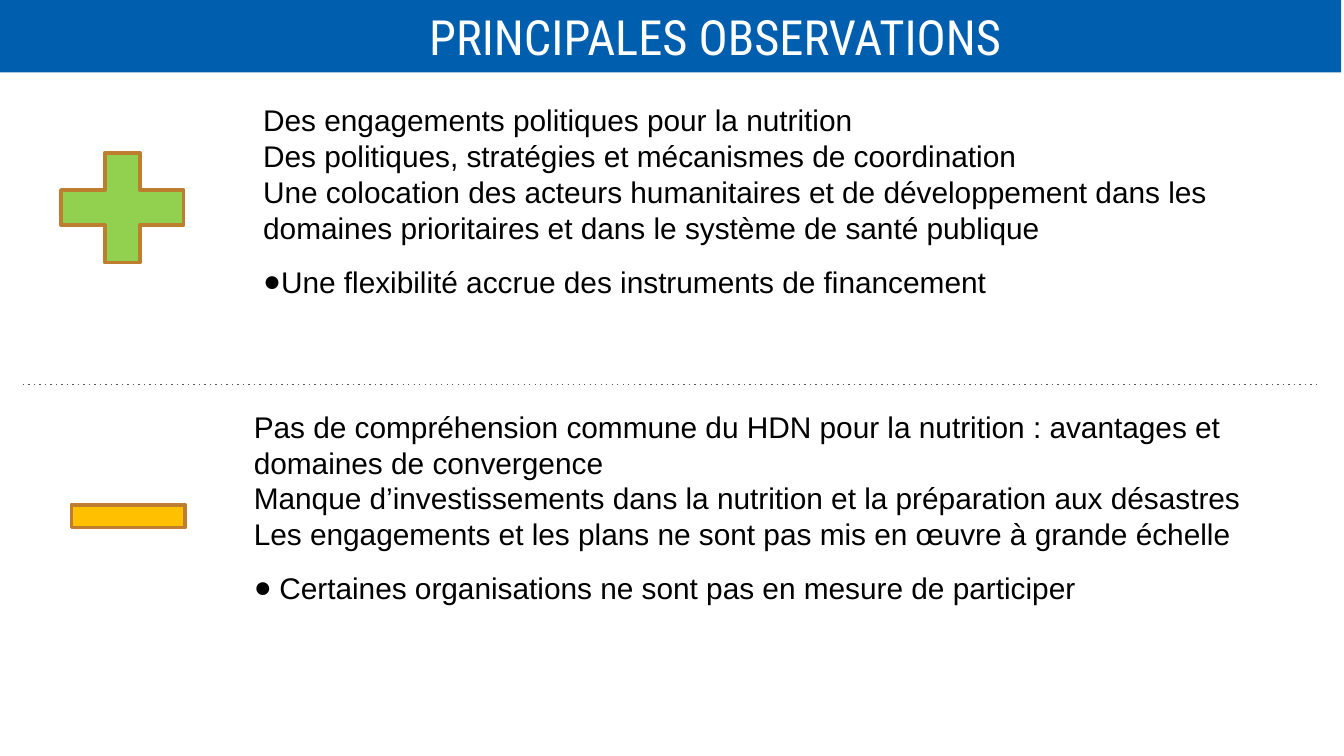
from lxml.etree import SubElement
from pptx import Presentation
from pptx.dml.color import RGBColor
from pptx.enum.shapes import MSO_CONNECTOR, MSO_SHAPE
from pptx.enum.text import MSO_ANCHOR, PP_ALIGN
from pptx.oxml.ns import qn
from pptx.util import Inches, Pt

# Content: plain lines first, then one bulleted line per section
TITLE = "PRINCIPALES OBSERVATIONS"
SECTIONS = [
    {
        "icon": (MSO_SHAPE.MATH_MINUS, "minus", (0.38, 3.48, 1.15, 0.72)),
        "area": (1.79, 2.99, 7.97, 2.15),
        "inset": 0.05,
        "indent": 0.19,
        "lines": [
            "Pas de compréhension commune du HDN pour la nutrition : avantages et "
            "domaines de convergence",
            "Manque d’investissements dans la nutrition et la préparation aux désastres",
            "Les engagements et les plans ne sont pas mis en œuvre à grande échelle",
        ],
        "bullet": "Certaines organisations ne sont pas en mesure de participer",
    },
    {
        "icon": (MSO_SHAPE.MATH_PLUS, "plus", (0.29, 0.99, 1.24, 1.11)),
        "area": (1.86, 0.66, 7.83, 2.05),
        "inset": 0.1,
        "indent": 0.12,
        "lines": [
            "Des engagements politiques pour la nutrition",
            "Des politiques, stratégies et mécanismes de coordination",
            "Une colocation des acteurs humanitaires et de développement dans les "
            "domaines prioritaires et dans le système de santé publique",
        ],
        "bullet": "Une flexibilité accrue des instruments de financement",
    },
]

THEME = {
    "banner": "005EAE", "title": "FFFFFF", "text": "000000",
    "plus": "92D050", "minus": "FFC000", "outline": "BD7F2F", "divider": "595959",
    "title_font": "Roboto Condensed", "title_size": 26,
    "text_font": "Arial", "text_size": 16,
    "line_spacing": 1.0, "bullet_spacing": 1.5,
}


def color(name):
    return RGBColor.from_string(THEME[name])


def add_span(para, text, role):
    span = para.add_run()
    span.text = text
    span.font.name = THEME[role + "_font"]
    span.font.size = Pt(THEME[role + "_size"])
    span.font.color.rgb = color(role)


def add_filled(page, kind, area, fill):
    shape = page.shapes.add_shape(kind, *map(Inches, area))
    shape.shadow.inherit = False
    shape.fill.solid()
    shape.fill.fore_color.rgb = color(fill)
    return shape


def set_indent(para, left, first=0):
    properties = para._p.get_or_add_pPr()
    properties.set("marL", str(Inches(left)))
    properties.set("indent", str(Inches(first)))
    return properties


def add_bullet(para, indent):
    properties = set_indent(para, indent, -indent)
    bullet_color = SubElement(properties, qn("a:buClr"))
    SubElement(bullet_color, qn("a:srgbClr"), val=THEME["text"])
    SubElement(properties, qn("a:buFont"), typeface=THEME["text_font"])
    SubElement(properties, qn("a:buChar"), char="●")


def add_text(page, section):
    box = page.shapes.add_textbox(*map(Inches, section["area"]))
    frame = box.text_frame
    frame.word_wrap = True
    frame.margin_left = frame.margin_right = Inches(0.1)
    frame.margin_top = frame.margin_bottom = Inches(section["inset"])
    texts = section["lines"] + [section["bullet"]]
    for index, text in enumerate(texts):
        para = frame.add_paragraph() if index else frame.paragraphs[0]
        is_bullet = index == len(texts) - 1
        para.line_spacing = THEME["bullet_spacing" if is_bullet else "line_spacing"]
        if is_bullet:
            add_bullet(para, section["indent"])
        add_span(para, text, "text")


def add_icon(page, section):
    kind, fill, area = section["icon"]
    icon = add_filled(page, kind, area, fill)
    icon.line.color.rgb = color("outline")
    icon.line.width = Pt(2)


def add_banner(page):
    banner = add_filled(page, MSO_SHAPE.RECTANGLE, (-0.02, 0, 10, 0.54), "banner")
    banner.line.fill.background()
    frame = banner.text_frame
    frame.word_wrap = True
    frame.vertical_anchor = MSO_ANCHOR.MIDDLE
    frame.margin_left = frame.margin_right = Inches(0.1)
    frame.margin_top = frame.margin_bottom = Inches(0.1)
    para = frame.paragraphs[0]
    para.alignment = PP_ALIGN.CENTER
    set_indent(para, 0.69)
    add_span(para, TITLE, "title")


def add_divider(page):
    ends = map(Inches, (0.17, 2.86, 9.83, 2.86))
    divider = page.shapes.add_connector(MSO_CONNECTOR.STRAIGHT, *ends)
    divider.line.color.rgb = color("divider")
    divider.line.width = Pt(0.75)
    SubElement(divider.line._get_or_add_ln(), qn("a:prstDash"), val="dot")
    SubElement(divider._element.spPr, qn("a:effectLst"))


def main():
    deck = Presentation()
    # Widescreen 16:9
    deck.slide_width, deck.slide_height = Inches(10), Inches(10 * 9 / 16)
    page = deck.slides.add_slide(deck.slide_layouts[6])
    lower, upper = SECTIONS
    # Back to front
    add_text(page, lower)
    add_banner(page)
    add_divider(page)
    add_text(page, upper)
    add_icon(page, upper)
    add_icon(page, lower)
    deck.save("out.pptx")


if __name__ == "__main__":
    main()
